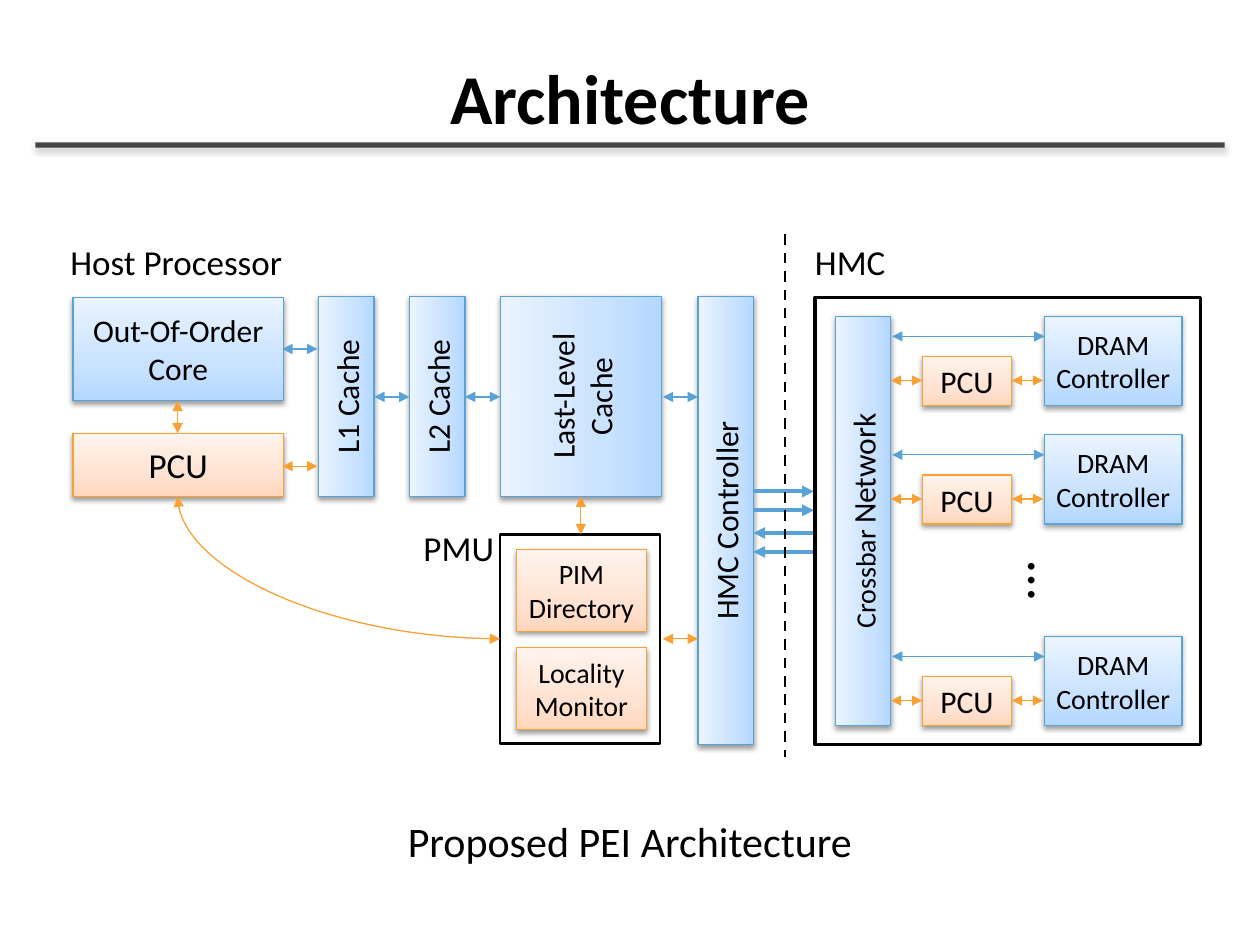
"""Builds the PEI architecture slide."""
from lxml import etree
from pptx import Presentation
from pptx import util as u
from pptx.dml import color
from pptx.enum import dml, shapes, text
from pptx.oxml import ns, parse_xml

HUES = {
    "ink": "000000", "paper": "FFFFFF", "blue": "58A2D8", "gold": "F9A134",
}
FADES = {
    "blue": ("B3D7FF", "C9E2FF", "EAF4FF"),
    "gold": ("FFD7BD", "FFE2D1", "FFF4ED"),
}
MID, LEFT, RIGHT = (text.PP_ALIGN.CENTER, text.PP_ALIGN.LEFT, text.PP_ALIGN.RIGHT)


class Board:
    """Holds the style and the current slide."""

    def __init__(self, slide, font="Calibri"):
        self.slide, self.font = slide, font

    def rgb(self, hue):
        return color.RGBColor.from_string(HUES[hue])

    def sub(self, node, tag, **attrs):
        return etree.SubElement(node, ns.qn(tag), attrs)

    def pen(self, line, hue, width):
        line.color.rgb = self.rgb(hue)
        line.width = u.Pt(width)

    def shade(self, node, alpha, dist):
        cast = self.sub(node, "a:outerShdw", blurRad=str(u.Pt(3.1)), dist=str(u.Pt(dist)),
                        dir="5400000", algn="ctr", rotWithShape="0")
        black = self.sub(cast, "a:srgbClr", val=HUES["ink"])
        self.sub(black, "a:alpha", val=str(alpha * 1000))

    def words(self, frame, runs, align=MID, bold=False):
        para = frame.paragraphs[0]
        para.alignment = align
        for part, size in runs:
            run = para.add_run()
            run.text = part
            run.font.name, run.font.size, run.font.bold = self.font, u.Pt(size), bold
            run.font.color.rgb = self.rgb("ink")

    def label(self, x, y, w, h, part, size, align=LEFT, wrap=False, bold=False, turn=0):
        box = self.slide.shapes.add_textbox(*map(u.Inches, (x, y, w, h)))
        box.rotation = turn
        box.text_frame.word_wrap = wrap
        self.words(box.text_frame, [(part, size)], align, bold)
        return box.text_frame

    def rect(self, x, y, w, h):
        shape = self.slide.shapes.add_shape(
            shapes.MSO_SHAPE.RECTANGLE, *map(u.Inches, (x, y, w, h)))
        shape.shadow.inherit = False
        return shape

    def frame(self, x, y, w, h, width):
        shape = self.rect(x, y, w, h)
        shape.fill.solid()
        shape.fill.fore_color.rgb = self.rgb("paper")
        self.pen(shape.line, "ink", width)

    def block(self, x, y, w, h, hue, *runs, tight=False):
        shape = self.rect(x, y, w, h)
        stops = "".join(
            f'<a:gs pos="{pos}"><a:srgbClr val="{code}"/></a:gs>'
            for pos, code in zip((0, 35000, 100000), FADES[hue]))
        props = shape.element.spPr
        props.insert(2, parse_xml(
            f'<a:gradFill {ns.nsdecls("a")} rotWithShape="1"><a:gsLst>{stops}</a:gsLst>'
            '<a:lin ang="16200000" scaled="0"/></a:gradFill>'))
        self.pen(shape.line, hue, 0.75)
        self.shade(props.find(ns.qn("a:effectLst")), 38, 1.6)
        frame = shape.text_frame
        frame.word_wrap = True
        frame.vertical_anchor = text.MSO_ANCHOR.MIDDLE
        if tight:
            frame.margin_left = frame.margin_right = u.Inches(0.05)
        self.words(frame, runs)
        return shape

    def tower(self, x, y, w, h, *runs):
        shift = (h - w) / 2
        self.block(x - shift, y + shift, h, w, "blue", *runs).rotation = 270

    def link(self, x1, y1, x2, y2, hue, width=0.75, ends=("head", "tail"), curve=False):
        kind = shapes.MSO_CONNECTOR.CURVE if curve else shapes.MSO_CONNECTOR.STRAIGHT
        wire = self.slide.shapes.add_connector(kind, *map(u.Inches, (x1, y1, x2, y2)))
        self.pen(wire.line, hue, width)
        props = wire.element.spPr
        for end in ends:
            self.sub(props.find(ns.qn("a:ln")), f"a:{end}End", type="triangle")
        self.sub(props, "a:effectLst")
        return wire

    def bend(self, x1, y1, x2, y2, hue):
        mid, level = (x1 + x2) / 2, (y1 + y2) / 2
        half, rise = (y2 - y1) / 2, (x2 - x1) / 2
        wire = self.link(mid + half, level - rise, mid - half, level + rise, hue, curve=True)
        props = wire.element.spPr
        props.find(ns.qn("a:xfrm")).set("rot", "16200000")
        props.find(ns.qn("a:prstGeom")).set("prst", "curvedConnector2")


def head(board):
    """Draws the title and its rule."""
    rule = board.link(0.28, 1.15, 9.72, 1.15, "ink", 3, ends=())
    props = rule.element.spPr
    board.sub(next(props.iter(ns.qn("a:srgbClr"))), "a:alpha", val="70000")
    board.shade(props.find(ns.qn("a:effectLst")), 35, 1.8)
    title = board.label(0.5, 0.3, 9, 0.85, "Architecture", 40, MID, True, True)
    title.vertical_anchor = text.MSO_ANCHOR.BOTTOM


def host(board):
    """Draws the host processor."""
    board.label(0.46, 1.86, 2.07, 0.48, "Host Processor", 20)
    board.block(0.58, 2.36, 1.67, 0.82, "blue", ("Out-Of-Order Core", 18))
    board.block(0.58, 3.44, 1.67, 0.5, "gold", ("PCU", 20))
    for x, w, name in ((2.53, 0.44, "L1 Cache"), (3.25, 0.44, "L2 Cache"),
                       (3.97, 1.28, "Last-Level Cache")):
        board.tower(x, 2.35, w, 1.59, (name, 18))
    board.tower(5.54, 2.35, 0.44, 3.56, ("HMC Controller", 18))
    for x, y, hue in ((2.24, 2.77, "blue"), (2.97, 3.15, "blue"), (3.69, 3.15, "blue"),
                      (5.26, 3.15, "blue"), (2.24, 3.7, "gold"), (5.26, 5.07, "gold")):
        board.link(x, y, x + 0.28, y, hue)
    board.link(1.41, 3.18, 1.41, 3.44, "gold")
    board.frame(3.97, 4.24, 1.27, 1.66, 1.5)
    board.label(3.19, 4.13, 0.83, 0.48, "PMU", 20, RIGHT)
    for y, name in ((4.36, "PIM Directory"), (5.14, "Locality Monitor")):
        board.block(4.1, y, 1.03, 0.65, "gold", (name, 16), tight=True)
    board.link(4.61, 4.24, 4.61, 3.94, "gold")
    board.bend(1.41, 3.94, 3.97, 5.07, "gold")


def cube(board):
    """Draws the memory cube and its links to the host."""
    for y, ends in ((3.9, ["tail"]), (4.05, ["tail"]), (4.23, ["head"]), (4.38, ["head"])):
        board.link(5.98, y, 6.46, y, "blue", 2.25, ends)
    split = board.link(6.23, 1.86, 6.23, 6.01, "ink", 1.5, ends=())
    split.line.dash_style = dml.MSO_LINE.DASH
    board.label(6.37, 1.86, 0.83, 0.48, "HMC", 20)
    board.frame(6.47, 2.36, 3.06, 3.55, 2)
    board.tower(6.63, 2.51, 0.44, 3.25, ("Crossbar ", 16), ("Network", 18))
    for y in (2.51, 3.45, 5.05):
        board.block(8.29, y, 1.09, 0.71, "blue", ("DRAM Controller", 16), tight=True)
        board.link(7.08, y + 0.16, 8.29, y + 0.16, "blue")
        board.block(7.32, y + 0.32, 0.71, 0.39, "gold", ("PCU", 18))
        for x in (7.07, 8.03):
            board.link(x, y + 0.51, x + 0.25, y + 0.51, "gold")
    board.label(8.14, 4.18, 0.34, 0.69, "…", 32, wrap=True, turn=90)


def main():
    """Builds and saves the slide."""
    deck = Presentation()
    deck.slide_width, deck.slide_height = u.Inches(10), u.Inches(7.5)
    board = Board(deck.slides.add_slide(deck.slide_layouts[6]))
    head(board)
    host(board)
    cube(board)
    board.label(3.12, 6.42, 3.76, 0.5, "Proposed PEI Architecture", 24, MID)
    deck.save("out.pptx")


if __name__ == "__main__":
    main()
